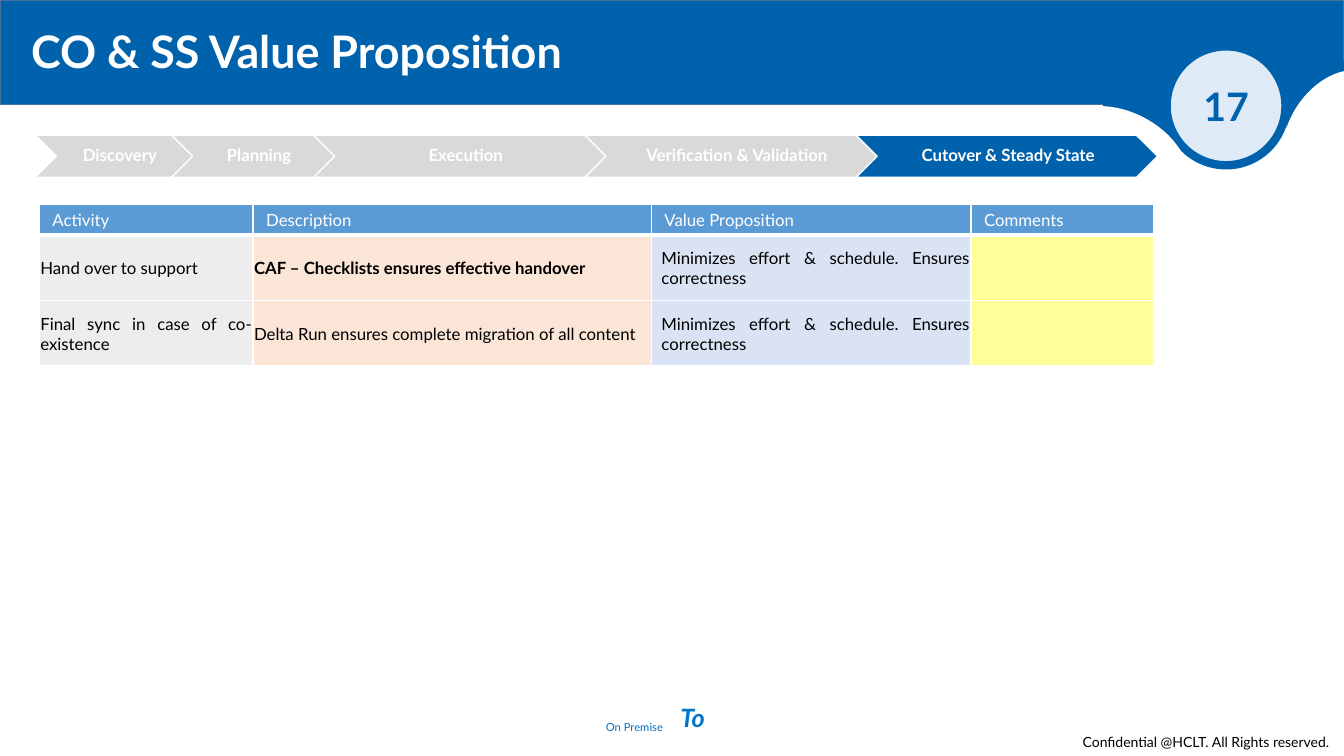
import pptx
import pptx.util
import pptx.dml.color
import pptx.enum.shapes
import pptx.enum.text
import pptx.oxml
import pptx.oxml.ns

Inches = pptx.util.Inches
Pt = pptx.util.Pt
RGBColor = pptx.dml.color.RGBColor
SHAPE = pptx.enum.shapes.MSO_SHAPE
ALIGN = pptx.enum.text.PP_ALIGN
ANCHOR = pptx.enum.text.MSO_ANCHOR

WHITE = RGBColor(0xFF, 0xFF, 0xFF)
BLACK = RGBColor(0x00, 0x00, 0x00)
BLUE = RGBColor(0x00, 0x62, 0xAD)
LINK_BLUE = RGBColor(0x00, 0x74, 0xC9)
BANNER_LINE = RGBColor(0x43, 0x73, 0x9E)
BADGE = RGBColor(0xDE, 0xEB, 0xF7)
GRAY = RGBColor(0xD9, 0xD9, 0xD9)
HEADER = RGBColor(0x5B, 0x9B, 0xD5)
COLUMN_FILLS = [
    RGBColor(0xED, 0xED, 0xED),
    RGBColor(0xFB, 0xE5, 0xD6),
    RGBColor(0xDA, 0xE3, 0xF3),
    RGBColor(0xFF, 0xFF, 0x99),
]

BANNER_SHAPES = [
    (SHAPE.RECTANGLE, (0, 0, 13.33, 1.04), 0, BLUE, BANNER_LINE, 1),
    (SHAPE.RECTANGLE, (12.7, 0.55, 0.67, 0.68), 349.9, BLUE, None, 0),
    (SHAPE.OVAL, (11.57, 0.46, 1.18, 1.18), 0, BADGE, BLUE, 6),
    (SHAPE.RECTANGLE, (10.94, 0.72, 0.67, 0.68), 356.6, BLUE, None, 0),
    (SHAPE.OVAL, (10.39, 1.11, 1.45, 1), 27.8, WHITE, None, 0),
    (SHAPE.OVAL, (12.57, 0.85, 1.4, 1), 300.2, WHITE, None, 0),
]
LABELS = [
    ("Confidential @HCLT. All Rights reserved.", (10.64, 7.23, 2.69, 0.27), False, ALIGN.LEFT,
     {"size": Pt(10)}, BLACK),
    ("On Premise", (5.91, 7.1, 0.89, 0.24), True, ALIGN.LEFT, {"size": Pt(8)}, LINK_BLUE),
    ("To", (6.65, 6.92, 0.47, 0.4), False, ALIGN.LEFT,
     {"size": Pt(18), "bold": True, "italic": True}, LINK_BLUE),
    ("17", (11.74, 0.77, 0.84, 0.57), True, ALIGN.CENTER, {"size": Pt(28), "bold": True}, BLUE),
    ("CO & SS Value Proposition", (0.21, 0.19, 5.94, 0.64), False, ALIGN.LEFT,
     {"size": Pt(32), "bold": True}, WHITE),
]
PHASES = [
    ("Discovery", 1.65),
    ("Planning", 1.71),
    ("Execution", 2.99),
    ("Verification & Validation", 2.99),
    ("Cutover & Steady State", 2.99),
]
ACTIVE_PHASE = "Cutover & Steady State"
PHASE_LEFT, PHASE_TOP, PHASE_HEIGHT, PHASE_OVERLAP = 0.35, 1.34, 0.42, 0.3

ROWS = [
    ["Activity", "Description", "Value Proposition", "Comments"],
    ["Hand over to support", "CAF – Checklists ensures effective handover",
     "Minimizes effort & schedule. Ensures correctness", ""],
    ["Final sync in case of co-existence", "Delta Run ensures complete migration of all content",
     "Minimizes effort & schedule. Ensures correctness", ""],
]
BOLD_CELL = (1, 1)
INDENTED_COLUMN = 2
COLUMN_WIDTHS = [2.12, 3.95, 3.17, 1.81]
ROW_HEIGHTS = [0.3, 0.65, 0.65]
HEADER_MARGINS = (0.13, 0.05, 0.13, 0.05)
BODY_MARGINS = (0.01, 0.01, 0.01, 0)
MARGIN_NAMES = ("margin_left", "margin_top", "margin_right", "margin_bottom")


def set_font(paragraph, formats, color):
    for name, value in {"name": "Lato", **formats}.items():
        setattr(paragraph.font, name, value)
    paragraph.font.color.rgb = color


def set_margins(target, margins):
    for name, value in zip(MARGIN_NAMES, margins):
        setattr(target, name, Inches(value))


def add_shape(slide, kind, box, fill, line, line_width, rotation=0):
    shape = slide.shapes.add_shape(kind, *map(Inches, box))
    shape.shadow.inherit = False
    shape.rotation = rotation
    shape.fill.solid()
    shape.fill.fore_color.rgb = fill
    if line is None:
        shape.line.fill.background()
    else:
        shape.line.color.rgb = line
        shape.line.width = Pt(line_width)


def add_label(slide, text, box, wrap, alignment, formats, color):
    frame = slide.shapes.add_textbox(*map(Inches, box)).text_frame
    frame.word_wrap = wrap
    paragraph = frame.paragraphs[0]
    paragraph.text = text
    paragraph.alignment = alignment
    set_font(paragraph, formats, color)
    return frame


def add_phases(slide):
    left = PHASE_LEFT
    point = PHASE_HEIGHT / 2
    for name, width in PHASES:
        fill = BLUE if name == ACTIVE_PHASE else GRAY
        add_shape(slide, SHAPE.CHEVRON, (left, PHASE_TOP, width, PHASE_HEIGHT), fill, WHITE, 1)
        text_box = (left + point, PHASE_TOP, width - 2 * point, PHASE_HEIGHT)
        frame = add_label(slide, name, text_box, True, ALIGN.CENTER,
                          {"size": Pt(12), "bold": True}, WHITE)
        frame.vertical_anchor = ANCHOR.MIDDLE
        set_margins(frame, (0.05, 0.02, 0.02, 0.02))
        frame.paragraphs[0].line_spacing = 0.9
        frame.paragraphs[0].space_after = Pt(4.2)
        left += width - PHASE_OVERLAP


def set_borders(cell, bottom_width):
    properties = cell._tc.get_or_add_tcPr()
    widths = {"lnL": 1, "lnR": 1, "lnT": 1, "lnB": bottom_width}
    for position, (tag, width) in enumerate(widths.items()):
        properties.insert(position, pptx.oxml.parse_xml(
            f'<a:{tag} {pptx.oxml.ns.nsdecls("a")} w="{Pt(width)}">'
            f'<a:solidFill><a:srgbClr val="{WHITE}"/></a:solidFill></a:{tag}>'))


def add_value_table(slide):
    frame = slide.shapes.add_table(len(ROWS), len(COLUMN_WIDTHS), Inches(0.39), Inches(2.03),
                                   Inches(sum(COLUMN_WIDTHS)), Inches(sum(ROW_HEIGHTS)))
    table = frame.table
    for column, width in zip(table.columns, COLUMN_WIDTHS):
        column.width = Inches(width)
    for row, height in zip(table.rows, ROW_HEIGHTS):
        row.height = Inches(height)
    for row_index, texts in enumerate(ROWS):
        is_header = row_index == 0
        for column_index, text in enumerate(texts):
            cell = table.cell(row_index, column_index)
            cell.fill.solid()
            cell.fill.fore_color.rgb = HEADER if is_header else COLUMN_FILLS[column_index]
            set_margins(cell, HEADER_MARGINS if is_header else BODY_MARGINS)
            cell.vertical_anchor = ANCHOR.TOP if is_header else ANCHOR.MIDDLE
            set_borders(cell, 3 if is_header else 1)
            paragraph = cell.text_frame.paragraphs[0]
            paragraph.text = text
            paragraph.alignment = ALIGN.JUSTIFY
            if not is_header and column_index == INDENTED_COLUMN:
                paragraph._p.get_or_add_pPr().set("marL", str(Inches(0.09)))
            bold = (row_index, column_index) == BOLD_CELL
            set_font(paragraph, {"size": Pt(12), "bold": bold}, WHITE if is_header else BLACK)


def main():
    presentation = pptx.Presentation()
    presentation.slide_width = Inches(13.33)
    presentation.slide_height = Inches(7.5)
    slide = presentation.slides.add_slide(presentation.slide_layouts[6])
    for kind, box, rotation, fill, line, line_width in BANNER_SHAPES:
        add_shape(slide, kind, box, fill, line, line_width, rotation)
    for label in LABELS:
        add_label(slide, *label)
    add_value_table(slide)
    add_phases(slide)
    presentation.save("out.pptx")


if __name__ == "__main__":
    main()
